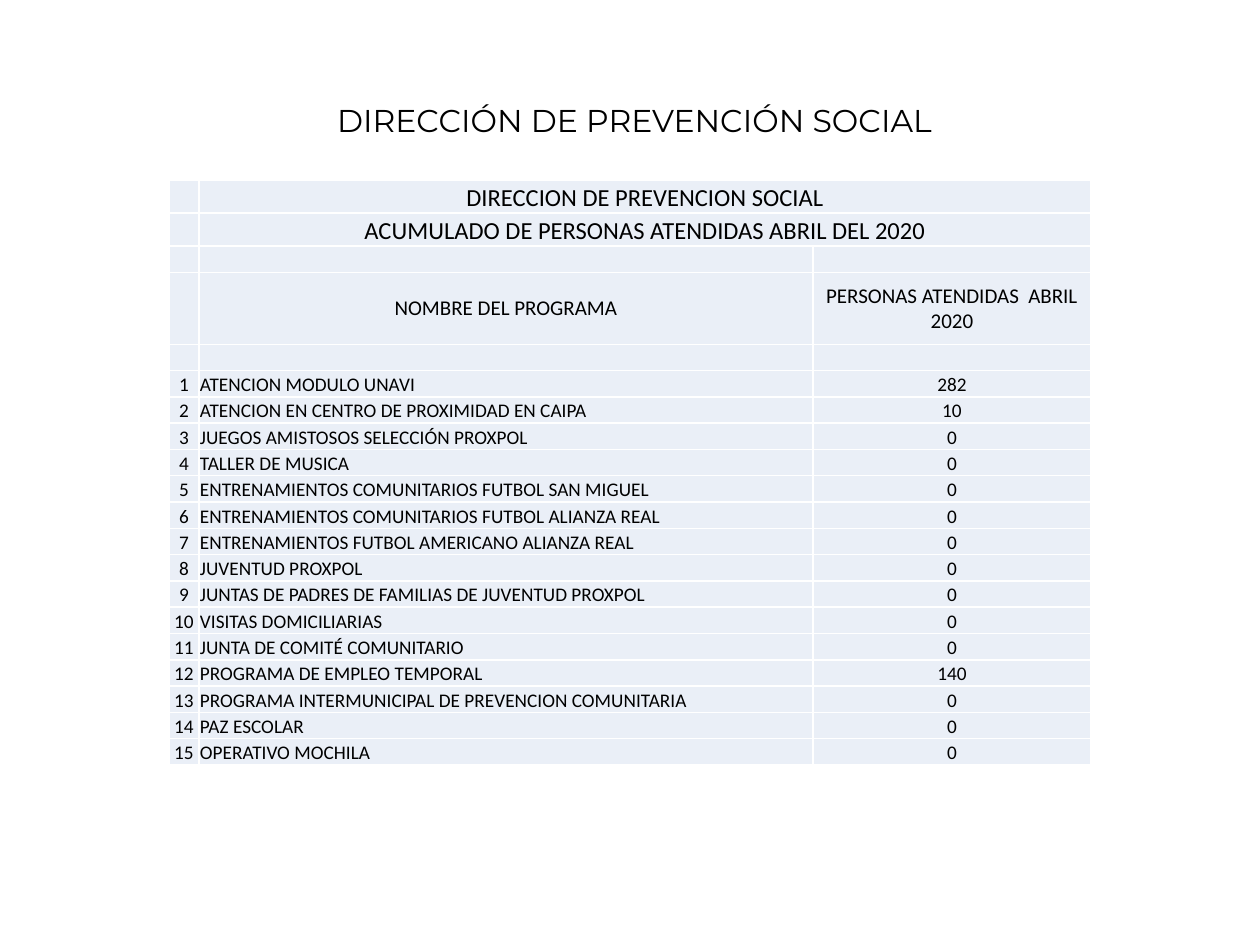
from dataclasses import dataclass

from lxml import etree
from pptx import Presentation
from pptx.dml.color import RGBColor
from pptx.enum.text import MSO_ANCHOR, MSO_AUTO_SIZE, PP_ALIGN
from pptx.oxml.ns import qn
from pptx.util import Pt

LEFT, CENTER = PP_ALIGN.LEFT, PP_ALIGN.CENTER
MIDDLE, BOTTOM = MSO_ANCHOR.MIDDLE, MSO_ANCHOR.BOTTOM
FIT_SHAPE = MSO_AUTO_SIZE.SHAPE_TO_FIT_TEXT
PX = 914400 // 126


@dataclass(frozen=True)
class Theme:
    ink: str = "000000"
    cell: str = "EAEFF7"
    border: str = "FFFFFF"
    border_pt: int = 1
    title_font: str = "Montserrat"
    table_font: str = "Calibri"
    title_pt: int = 18
    banner_pt: int = 14
    heading_pt: int = 12
    body_pt: int = 11


THEME = Theme()

BANNERS = [
    "DIRECCION DE PREVENCION SOCIAL",
    "ACUMULADO DE PERSONAS ATENDIDAS ABRIL DEL 2020",
]
HEADINGS = ["", "NOMBRE DEL PROGRAMA", "PERSONAS ATENDIDAS  ABRIL 2020"]
PROGRAMS = [
    ("ATENCION MODULO UNAVI", 282),
    ("ATENCION EN CENTRO DE PROXIMIDAD EN CAIPA", 10),
    ("JUEGOS AMISTOSOS SELECCIÓN PROXPOL", 0),
    ("TALLER DE MUSICA", 0),
    ("ENTRENAMIENTOS COMUNITARIOS FUTBOL SAN MIGUEL", 0),
    ("ENTRENAMIENTOS COMUNITARIOS FUTBOL ALIANZA REAL", 0),
    ("ENTRENAMIENTOS FUTBOL AMERICANO ALIANZA REAL", 0),
    ("JUVENTUD PROXPOL", 0),
    ("JUNTAS DE PADRES DE FAMILIAS DE JUVENTUD PROXPOL", 0),
    ("VISITAS DOMICILIARIAS", 0),
    ("JUNTA DE COMITÉ COMUNITARIO", 0),
    ("PROGRAMA DE EMPLEO TEMPORAL", 140),
    ("PROGRAMA INTERMUNICIPAL DE PREVENCION COMUNITARIA", 0),
    ("PAZ ESCOLAR", 0),
    ("OPERATIVO MOCHILA", 0),
]


def add_text(paragraph, text, font, size, align):
    paragraph.alignment = align
    run = paragraph.add_run()
    run.text = text
    run.font.name = font
    run.font.size = Pt(size)
    run.font.color.rgb = RGBColor.from_string(THEME.ink)


def add_borders(cell):
    properties = cell._tc.get_or_add_tcPr()
    for position, side in enumerate(("lnL", "lnR", "lnT", "lnB")):
        line = etree.Element(qn(f"a:{side}"), w=str(Pt(THEME.border_pt)))
        fill = etree.SubElement(line, qn("a:solidFill"))
        etree.SubElement(fill, qn("a:srgbClr"), val=THEME.border)
        properties.insert(position, line)


def fill_cell(cell, text, size, align, anchor):
    cell.margin_left = cell.margin_right = cell.margin_top = PX
    cell.margin_bottom = 0
    cell.vertical_anchor = anchor
    cell.fill.solid()
    cell.fill.fore_color.rgb = RGBColor.from_string(THEME.cell)
    add_borders(cell)
    paragraph = cell.text_frame.paragraphs[0]
    if text:
        add_text(paragraph, text, THEME.table_font, size, align)
    else:
        # Small empty text keeps the row from growing
        etree.SubElement(paragraph._p, qn("a:endParaRPr"), sz=str(size * 100))


def add_title(slide, left, top, width, height):
    title = slide.shapes.add_textbox(left * PX, top * PX, width * PX, height * PX)
    frame = title.text_frame
    frame.word_wrap = True
    frame.auto_size = FIT_SHAPE
    add_text(frame.paragraphs[0], "DIRECCIÓN DE PREVENCIÓN SOCIAL",
             THEME.title_font, THEME.title_pt, CENTER)


def add_attendance_table(slide, left, top, width, height):
    blank = ["", "", ""]
    banner_rows = [["", banner, ""] for banner in BANNERS]
    program_rows = [[str(number), name, str(people)]
                    for number, (name, people) in enumerate(PROGRAMS, 1)]
    rows = [*banner_rows, blank, HEADINGS, blank, *program_rows]

    table = slide.shapes.add_table(len(rows), 3, left * PX, top * PX,
                                   width * PX, height * PX).table
    table.first_row = table.horz_banding = False

    # Columns: number, programme, people served
    number_width, people_width = 30, 278
    widths = [number_width, width - number_width - people_width, people_width]
    for column, column_width in zip(table.columns, widths):
        column.width = column_width * PX

    # Banners and headings are taller; the other rows share what is left
    heading_row = len(BANNERS) + 1
    tall_rows = {0: 33, 1: 33, heading_row: 72}
    shared = (height - sum(tall_rows.values())) * PX // (len(rows) - len(tall_rows))
    for index, row in enumerate(table.rows):
        row.height = tall_rows[index] * PX if index in tall_rows else shared

    # Cell contents
    for row_index, texts in enumerate(rows):
        size, anchor = THEME.body_pt, BOTTOM
        if row_index < len(BANNERS):
            size = THEME.banner_pt
        elif row_index == heading_row:
            size, anchor = THEME.heading_pt, MIDDLE
        for column_index, text in enumerate(texts):
            is_name = column_index == 1 and row_index > heading_row
            fill_cell(table.cell(row_index, column_index), text, size,
                      LEFT if is_name else CENTER, anchor)

    # Banners span programme and people
    for index in range(len(BANNERS)):
        table.cell(index, 1).merge(table.cell(index, 2))


def main():
    presentation = Presentation()
    presentation.slide_width = 1260 * PX
    presentation.slide_height = 945 * PX
    slide = presentation.slides.add_slide(presentation.slide_layouts[6])
    add_title(slide, 203, 95, 863, 50)
    add_attendance_table(slide, 169, 180, 922, 585)
    presentation.save("out.pptx")


if __name__ == "__main__":
    main()
